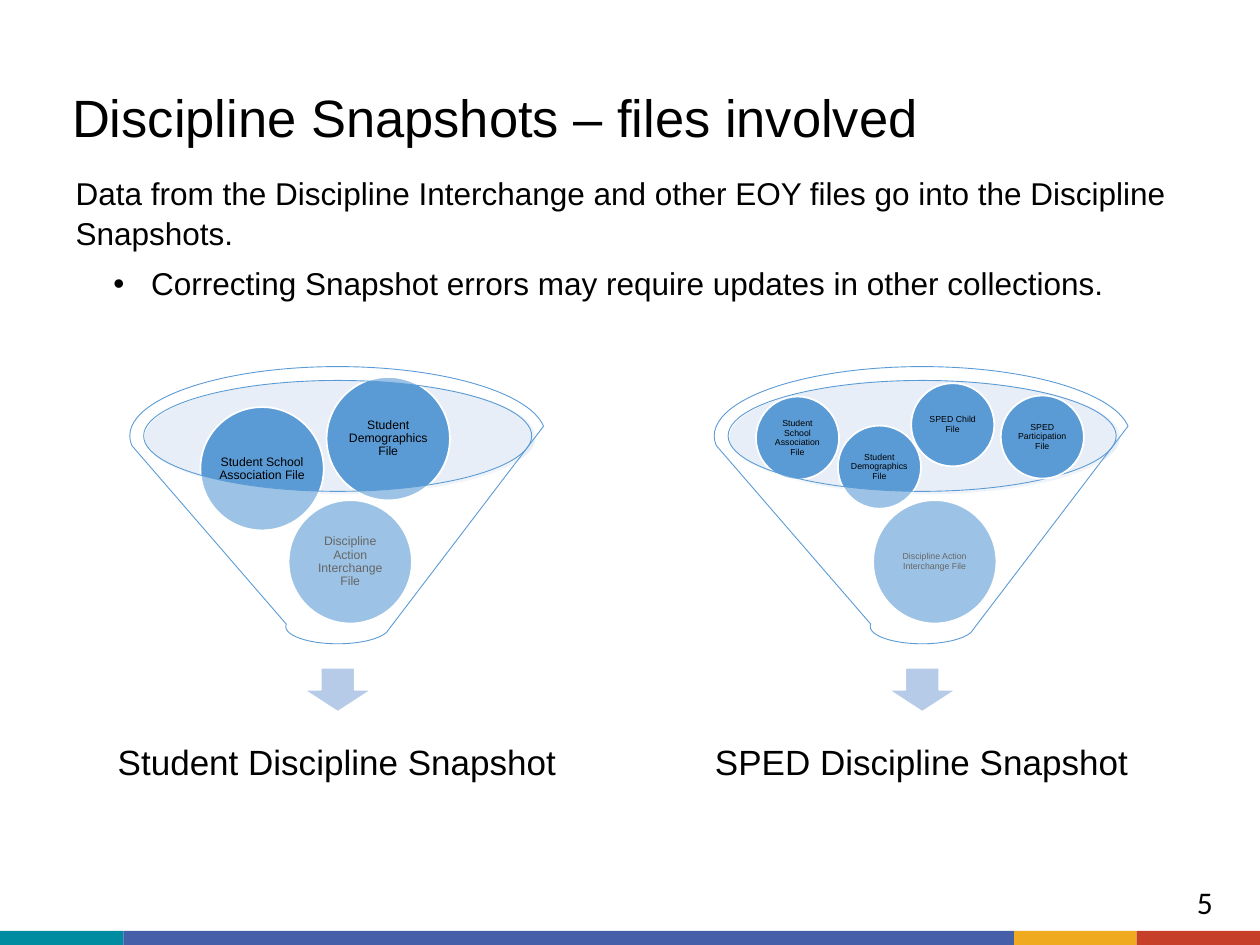
from lxml.etree import SubElement
from pptx import Presentation
from pptx.dml.color import RGBColor
from pptx.enum.shapes import MSO_SHAPE
from pptx.enum.text import MSO_ANCHOR, MSO_AUTO_SIZE, PP_ALIGN
from pptx.oxml.ns import qn
from pptx.util import Pt

BLACK = RGBColor(0x00, 0x00, 0x00)
WHITE = RGBColor(0xFF, 0xFF, 0xFF)
TEAL = RGBColor(0x00, 0x8C, 0xA0)
INDIGO = RGBColor(0x45, 0x5F, 0xA9)
AMBER = RGBColor(0xEF, 0xAA, 0x1F)
RED = RGBColor(0xC6, 0x3F, 0x28)
BLUE = RGBColor(0x5B, 0x9B, 0xD5)
PALE_BLUE = RGBColor(0xB5, 0xCB, 0xE7)
RIM_BLUE = RGBColor(0xC4, 0xD5, 0xEB)

LARGE, SMALL = 70.5, 47.5  # circle diameters


def place(shape, left, top, width, height):
    shape.left, shape.top = Pt(left), Pt(top)
    shape.width, shape.height = Pt(width), Pt(height)


def set_bullet(para, char=None, left=0, indent=0):
    properties = para._p.get_or_add_pPr()
    properties.set("marL", str(Pt(left)))
    properties.set("indent", str(Pt(indent)))
    if char:
        SubElement(properties, qn("a:buChar"), char=char)
    else:
        SubElement(properties, qn("a:buNone"))


def write(para, text, size=18, font="Arial", align=PP_ALIGN.LEFT, spacing=1.0, before=0):
    para.alignment = align
    para.line_spacing = spacing
    para.space_before = Pt(before)
    para.space_after = Pt(0)
    span = para.add_run()
    span.text = text
    span.font.size = Pt(size)
    span.font.name = font
    span.font.color.rgb = BLACK


def set_frame(frame, inset=None, anchor=MSO_ANCHOR.TOP):
    frame.word_wrap = True
    frame.auto_size = MSO_AUTO_SIZE.NONE
    frame.vertical_anchor = anchor
    if inset is not None:
        frame.margin_left = frame.margin_right = Pt(inset)
        frame.margin_top = frame.margin_bottom = Pt(inset)
    return frame.paragraphs[0]


def add_text(page, text, position, inset=None, anchor=MSO_ANCHOR.TOP, **style):
    box = page.shapes.add_textbox(*map(Pt, position))
    write(set_frame(box.text_frame, inset, anchor), text, **style)


def add_shape(page, kind, position, fill, line=None, line_width=1, opacity=None):
    shape = page.shapes.add_shape(kind, *map(Pt, position))
    shape.shadow.inherit = False
    shape.fill.solid()
    shape.fill.fore_color.rgb = fill
    if opacity is not None:
        color = shape._element.spPr.find(qn("a:solidFill"))[0]
        SubElement(color, qn("a:alpha"), val=str(opacity * 1000))
    if line is None:
        shape.line.fill.background()
    else:
        shape.line.color.rgb = line
        shape.line.width = Pt(line_width)
    return shape


def add_file(page, text, left, top, diameter, size):
    circle = add_shape(page, MSO_SHAPE.OVAL, (left, top, diameter, diameter), BLUE, WHITE)
    para = set_frame(circle.text_frame, 0.25, MSO_ANCHOR.MIDDLE)
    write(para, text, size=size, align=PP_ALIGN.CENTER, spacing=0.9)


def add_funnel(page, left, label, diameter, size, inside, in_front=()):
    """Files are (name, offset from the funnel's left, top)."""
    add_shape(page, MSO_SHAPE.OVAL, (left + 8.6, 217.3, 223.2, 65.2), RIM_BLUE, opacity=40)
    add_shape(page, MSO_SHAPE.DOWN_ARROW, (left + 99.4, 381.6, 38.9, 25.2), PALE_BLUE, WHITE)
    add_text(page, label, (left - 38.2, 413.3, 313.2, 46.8), inset=11.5,
             anchor=MSO_ANCHOR.MIDDLE, size=20, align=PP_ALIGN.CENTER, spacing=0.9)
    add_file(page, "Discipline Action Interchange File", left + 90.7, 285.8, LARGE, size)
    for name, offset, top in inside:
        add_file(page, name, left + offset, top, diameter, size)
    # The translucent funnel dims the files inside it
    add_shape(page, MSO_SHAPE.FUNNEL, (left, 209.5, 237.6, 158.4), WHITE, BLUE, 0.5, 40)
    for name, offset, top in in_front:
        add_file(page, name, left + offset, top, diameter, size)


def add_footer(page):
    edges = (0, 70.5, 579.5, 649.5, 720)
    for color, left, right in zip((TEAL, INDIGO, AMBER, RED), edges, edges[1:]):
        add_shape(page, MSO_SHAPE.RECTANGLE, (left, 532, right - left, 8), color)
    add_text(page, "5", (676.8, 501.1, 43.2, 33.1), font="Calibri")


def add_heading(page):
    title = page.shapes.title
    place(title, 36, 36, 626.4, 54)
    write(set_frame(title.text_frame, 5.2, MSO_ANCHOR.BOTTOM),
          "Discipline Snapshots – files involved", size=30, spacing=0.9)

    body = page.placeholders[1]
    place(body, 36, 95, 640.8, 78.5)
    intro = set_frame(body.text_frame)
    set_bullet(intro)
    write(intro, "Data from the Discipline Interchange and other EOY files go into "
                 "the Discipline Snapshots.", spacing=1.05)
    point = body.text_frame.add_paragraph()
    point.level = 1
    set_bullet(point, "•", 43.2, -21.6)
    write(point, "Correcting Snapshot errors may require updates in other collections.",
          spacing=1.05, before=6)


def main():
    deck = Presentation()
    deck.slide_width, deck.slide_height = Pt(720), Pt(540)
    page = deck.slides.add_slide(deck.slide_layouts[1])
    add_footer(page)
    add_heading(page)

    # One funnel of files for each snapshot
    add_funnel(page, 74.2, "Student Discipline Snapshot", LARGE, 7,
               [("Student School Association File", 40.3, 232.6),
                ("Student Demographics File", 112.4, 215.4)])
    add_funnel(page, 408.2, "SPED Discipline Snapshot", SMALL, 5,
               [("Student School Association File", 23.8, 226.6),
                ("Student Demographics File", 70.6, 243.2)],
               [("SPED Participation File", 163.7, 226),
                ("SPED Child File", 112.5, 219)])
    deck.save("out.pptx")


if __name__ == "__main__":
    main()
